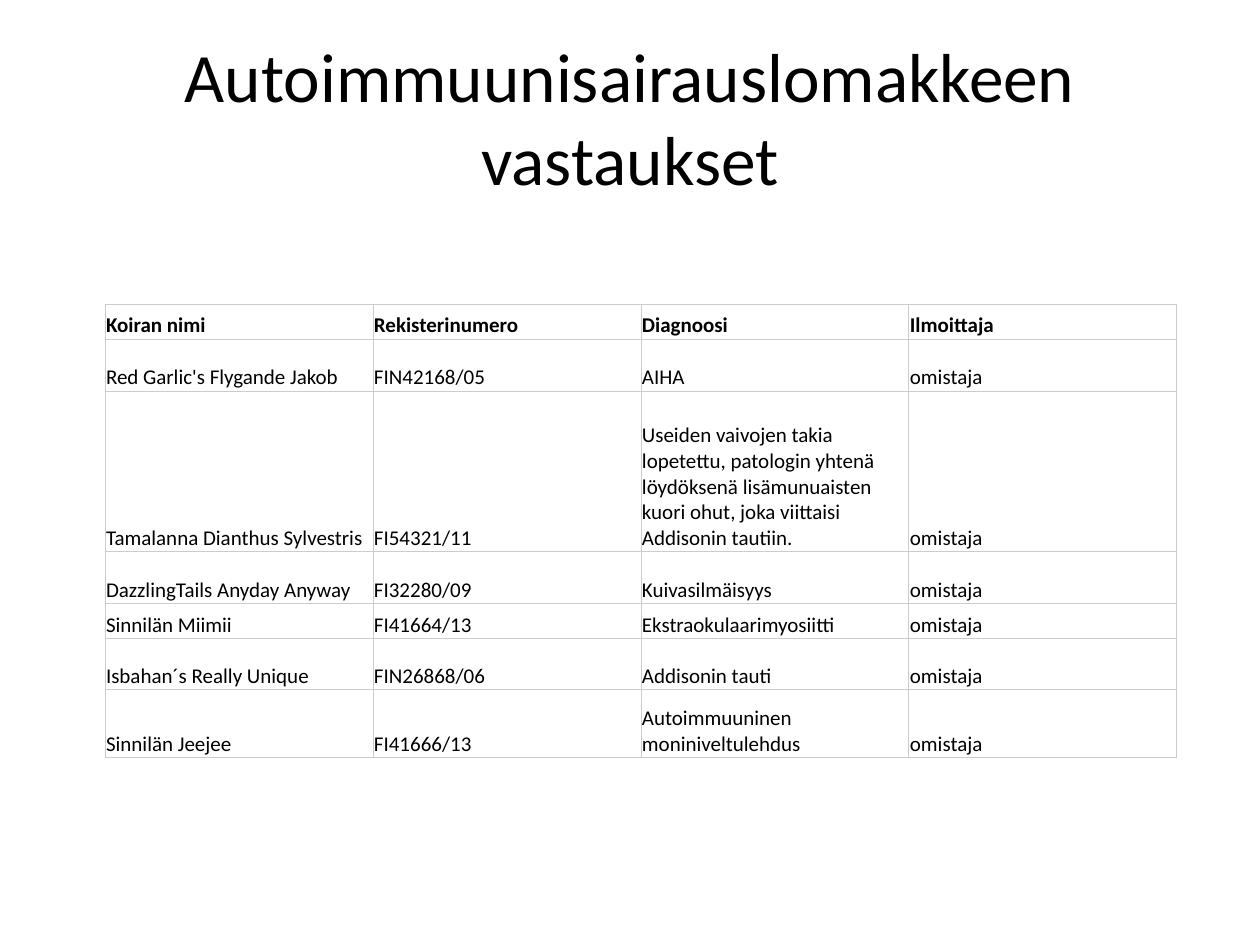
"""Build a slide with a table of reported autoimmune diagnoses."""
import pptx
import pptx.dml.color
import pptx.enum.text
import pptx.oxml
import pptx.oxml.ns
import pptx.util

PX = 914400 // 126
FONT = "Calibri"
BORDER = "CCCCCC"
ROWS = [
    ("Koiran nimi", "Rekisterinumero", "Diagnoosi", "Ilmoittaja"),
    ("Red Garlic's Flygande Jakob", "FIN42168/05", "AIHA", "omistaja"),
    ("Tamalanna Dianthus Sylvestris", "FI54321/11",
     "Useiden vaivojen takia lopetettu, patologin yhtenä löydöksenä "
     "lisämunuaisten kuori ohut, joka viittaisi Addisonin tautiin.", "omistaja"),
    ("DazzlingTails Anyday Anyway", "FI32280/09", "Kuivasilmäisyys", "omistaja"),
    ("Sinnilän Miimii", "FI41664/13", "Ekstraokulaarimyosiitti", "omistaja"),
    ("Isbahan´s Really Unique", "FIN26868/06", "Addisonin tauti", "omistaja"),
    ("Sinnilän Jeejee", "FI41666/13", "Autoimmuuninen moniniveltulehdus", "omistaja"),
]
ROW_HEIGHTS = [35, 52, 161, 52, 35, 51, 68]
COLUMN_WIDTH = 268


def style(paragraph, size, color, bold=False):
    paragraph.font.name = FONT
    paragraph.font.size = pptx.util.Pt(size)
    paragraph.font.bold = bold
    paragraph.font.color.rgb = pptx.dml.color.RGBColor.from_string(color)


def add_borders(cell, color, width):
    properties = cell._tc.get_or_add_tcPr()
    for side in ("L", "R", "T", "B"):
        properties.append(pptx.oxml.parse_xml(
            f'<a:ln{side} {pptx.oxml.ns.nsdecls("a")} w="{pptx.util.Pt(width)}">'
            f'<a:solidFill><a:srgbClr val="{color}"/></a:solidFill></a:ln{side}>'))


presentation = pptx.Presentation()
presentation.slide_width = 1260 * PX
presentation.slide_height = 945 * PX
slide = presentation.slides.add_slide(presentation.slide_layouts[5])

title = slide.shapes.title
title.left, title.top, title.width, title.height = (
    value * PX for value in (63, 38, 1134, 157))
title.text_frame.text = "Autoimmuunisairauslomakkeen vastaukset"
title.text_frame.auto_size = pptx.enum.text.MSO_AUTO_SIZE.NONE
title.text_frame.vertical_anchor = pptx.enum.text.MSO_ANCHOR.MIDDLE
title_paragraph = title.text_frame.paragraphs[0]
title_paragraph.alignment = pptx.enum.text.PP_ALIGN.CENTER
style(title_paragraph, 39.6, "000000")

column_count = len(ROWS[0])
table = slide.shapes.add_table(
    len(ROWS), column_count, 105 * PX, 304 * PX,
    column_count * COLUMN_WIDTH * PX, sum(ROW_HEIGHTS) * PX).table
for column in table.columns:
    column.width = COLUMN_WIDTH * PX

for row_index, (texts, height) in enumerate(zip(ROWS, ROW_HEIGHTS)):
    table.rows[row_index].height = height * PX
    for column_index, text in enumerate(texts):
        cell = table.cell(row_index, column_index)
        cell.text = text
        cell.vertical_anchor = pptx.enum.text.MSO_ANCHOR.BOTTOM
        cell.margin_left = cell.margin_right = PX
        cell.margin_top = cell.margin_bottom = PX
        add_borders(cell, BORDER, 0.6)
        cell.fill.background()
        style(cell.text_frame.paragraphs[0], 12, "000000", row_index == 0)

presentation.save("out.pptx")
